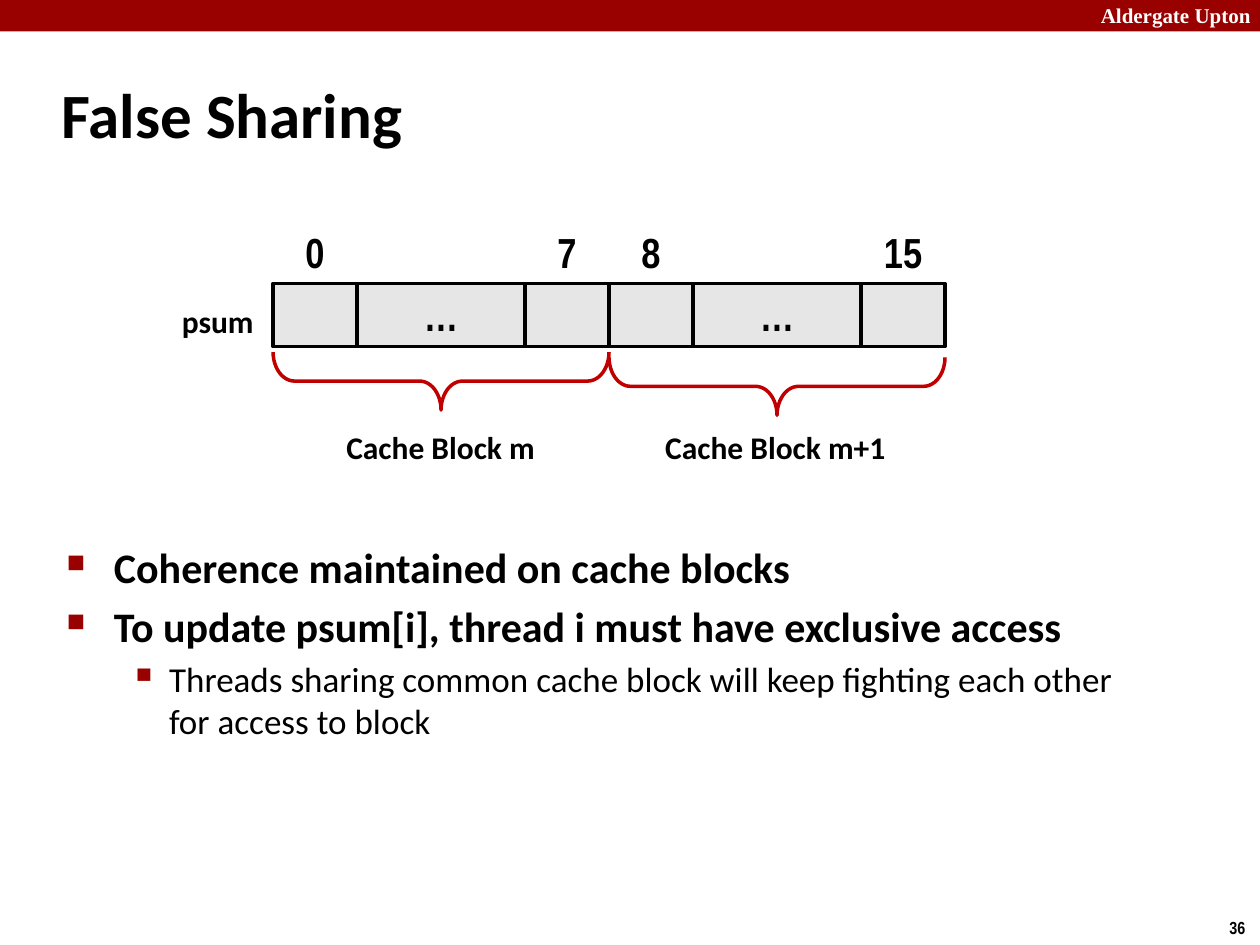
from lxml.etree import SubElement
from pptx import Presentation
from pptx.dml.color import RGBColor
from pptx.enum.shapes import MSO_SHAPE as Preset
from pptx.enum.text import MSO_ANCHOR as Anchor, MSO_AUTO_SIZE as AutoSize, PP_ALIGN as Align
from pptx.oxml.ns import qn
from pptx.util import Pt

BLACK = RGBColor(0x00, 0x00, 0x00)
WHITE = RGBColor(0xFF, 0xFF, 0xFF)
CRIMSON = RGBColor(0x99, 0x00, 0x00)
BRACE_RED = RGBColor(0xC0, 0x00, 0x00)
CELL_GRAY = RGBColor(0xE6, 0xE6, 0xE6)

CELL, ROW_LEFT, ROW_TOP, ROW_HEIGHT = 48, 156, 162, 36
BLOCK_WIDTH = 4 * CELL
BRACE_DEPTH = 33.12

NARROW = {"name": "Arial Narrow", "size": Pt(24), "bold": True}
HEADING = {"name": "Calibri", "size": Pt(36), "bold": True}
CAPTION = {"name": "Calibri", "size": Pt(18), "bold": True}
POINT = {"name": "Calibri", "size": Pt(24), "bold": True}
SUBPOINT = {"name": "Calibri", "size": Pt(20), "bold": False}
HEADER = {"name": "Times New Roman", "size": Pt(12), "bold": True}
PAGE = {"name": "Arial Narrow", "size": Pt(10), "bold": True}

BULLETS = [
    ("Coherence maintained on cache blocks", 0),
    ("To update psum[i], thread i must have exclusive access", 0),
    ("Threads sharing common cache block will keep fighting each other for access to block", 1),
]
BULLET_LEVELS = [
    {"font": POINT, "margin": 27, "hang": 27, "before": 4.8, "mark": "■", "percent": 60},
    {"font": SUBPOINT, "margin": 58.5, "hang": 22.5, "before": 4, "mark": "▪", "percent": 110},
]


def apply(target, values):
    for attribute, value in values.items():
        setattr(target, attribute, value)


def write(paragraph, wording, font, color=BLACK):
    run = paragraph.add_run()
    run.text = wording
    apply(run.font, font)
    run.font.color.rgb = color


def fill_text(holder, wording, font, align=Align.LEFT, color=BLACK, **frame):
    apply(holder.text_frame, frame)
    line = holder.text_frame.paragraphs[0]
    line.alignment = align
    write(line, wording, font, color)


def add_label(slide, box, wording, font, **look):
    label = slide.shapes.add_textbox(*map(Pt, box))
    fill_text(label, wording, font, **{"word_wrap": False, **look})


def add_preset(slide, preset, box, fill=None, line=None):
    shape = slide.shapes.add_shape(preset, *map(Pt, box))
    shape.shadow.inherit = False
    if fill is None:
        shape.fill.background()
    else:
        shape.fill.solid()
        shape.fill.fore_color.rgb = fill
    if line is None:
        shape.line.fill.background()
    else:
        shape.line.color.rgb = line
        shape.line.width = Pt(2)
    return shape


def add_cell(slide, left, width, content=""):
    cell = add_preset(slide, Preset.RECTANGLE, (left, ROW_TOP, width, ROW_HEIGHT), CELL_GRAY, BLACK)
    if content:
        fill_text(cell, content, NARROW, Align.CENTER,
                  vertical_anchor=Anchor.MIDDLE, word_wrap=False)


def add_index(slide, left, index):
    add_label(slide, (left, ROW_TOP - ROW_HEIGHT, CELL, ROW_HEIGHT), str(index), NARROW,
              align=Align.CENTER, vertical_anchor=Anchor.MIDDLE)


def add_brace(slide, left, middle):
    center = left + BLOCK_WIDTH / 2
    box = (center - BRACE_DEPTH / 2, middle - BLOCK_WIDTH / 2, BRACE_DEPTH, BLOCK_WIDTH)
    brace = add_preset(slide, Preset.RIGHT_BRACE, box, line=BRACE_RED)
    brace.rotation = 90
    brace.adjustments[0] = 0.37


def add_cache_block(slide, left, first, last, brace_middle):
    add_cell(slide, left, CELL)
    add_cell(slide, left + CELL, 2 * CELL, "…")
    add_cell(slide, left + 3 * CELL, CELL)
    add_index(slide, left, first)
    add_index(slide, left + 3 * CELL, last)
    add_brace(slide, left, brace_middle)


def set_bullet(paragraph, margin, hang, mark, percent):
    properties = paragraph._p.get_or_add_pPr()
    properties.set("marL", str(Pt(margin)))
    properties.set("indent", str(-Pt(hang)))
    color = SubElement(properties, qn("a:buClr"))
    SubElement(color, qn("a:srgbClr"), val=str(CRIMSON))
    SubElement(properties, qn("a:buSzPct"), val=str(percent * 1000))
    SubElement(properties, qn("a:buChar"), char=mark)


def add_bullets(slide, box, bullets):
    frame = slide.shapes.add_textbox(*map(Pt, box)).text_frame
    frame.word_wrap = True
    for position, (wording, depth) in enumerate(bullets):
        point = frame.add_paragraph() if position else frame.paragraphs[0]
        style = BULLET_LEVELS[depth]
        apply(point, {"level": depth, "space_before": Pt(style["before"])})
        set_bullet(point, style["margin"], style["hang"], style["mark"], style["percent"])
        write(point, wording, style["font"])


def main():
    deck = Presentation()
    apply(deck, {"slide_width": Pt(720), "slide_height": Pt(540)})
    slide = deck.slides.add_slide(deck.slide_layouts[6])

    add_preset(slide, Preset.RECTANGLE, (0, 0, 720, 18), CRIMSON)
    add_label(slide, (622, -2.2, 103, 21.8), "Aldergate Upton", HEADER,
              color=WHITE, word_wrap=True, auto_size=AutoSize.SHAPE_TO_FIT_TEXT)
    add_label(slide, (695.5, 520.6, 24.5, 19.4), "36", PAGE,
              auto_size=AutoSize.SHAPE_TO_FIT_TEXT)
    add_label(slide, (28, 34.5, 597.6, 60), "False Sharing", HEADING,
              word_wrap=True, vertical_anchor=Anchor.MIDDLE)
    add_bullets(slide, (31, 306, 622, 193), BULLETS)

    add_cache_block(slide, ROW_LEFT, 0, 7, 217.8)
    add_cache_block(slide, ROW_LEFT + BLOCK_WIDTH, 8, 15, 220.8)

    captions = [
        ((190.2, 241.2, 123.2, 29), "Cache Block m", Align.CENTER),
        ((372.2, 241.2, 141.8, 29), "Cache Block m+1", Align.CENTER),
        ((95.8, 169.2, 56.2, 29), "psum", Align.RIGHT),
    ]
    for box, wording, align in captions:
        add_label(slide, box, wording, CAPTION, align=align,
                  auto_size=AutoSize.SHAPE_TO_FIT_TEXT)

    deck.save("out.pptx")


if __name__ == "__main__":
    main()
